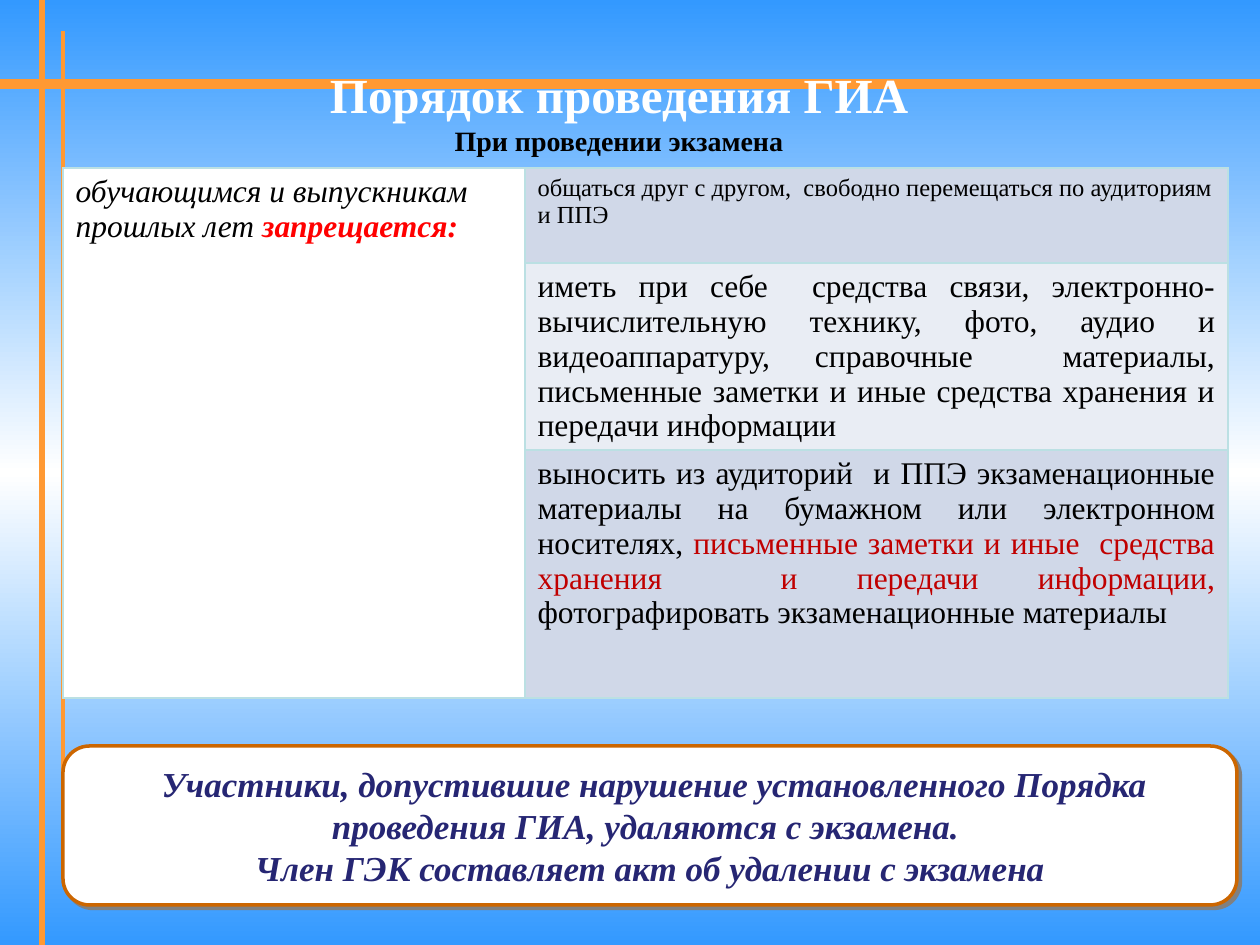
from copy import deepcopy
from dataclasses import dataclass

from lxml import etree
from pptx import Presentation
from pptx.dml.color import RGBColor
from pptx.enum import shapes, text
from pptx.oxml import ns
from pptx.util import Pt

PX = 914400 // 126
FACE = "Times New Roman"
BLUE = RGBColor(0x33, 0x99, 0xFF)
WHITE = RGBColor(0xFF, 0xFF, 0xFF)
BLACK = RGBColor(0, 0, 0)
ORANGE = RGBColor(0xFF, 0x99, 0x33)
RUST = RGBColor(0xCC, 0x66, 0x00)
RED = RGBColor(0xFF, 0, 0)
CRIMSON = RGBColor(0xC0, 0, 0)
NAVY = RGBColor(0x26, 0x26, 0x73)
MIST = RGBColor(0xD0, 0xD8, 0xE8)
PALE = RGBColor(0xE9, 0xED, 0xF4)
TEAL = RGBColor(0xBB, 0xE0, 0xE3)
GREY = RGBColor(0x80, 0x80, 0x80)


@dataclass
class Bar:
    x1: int
    y1: int
    x2: int
    y2: int
    width: float


@dataclass
class Span:
    words: str
    color: RGBColor = BLACK
    bold: bool = False


@dataclass
class Entry:
    row: int
    col: int
    fill: RGBColor
    size: int
    spans: list[Span]
    align: text.PP_ALIGN = text.PP_ALIGN.LEFT
    italic: bool = False


BARS = [
    Bar(0, 84, 1260, 84, 6),
    Bar(42, 0, 42, 945, 3),
    Bar(63, 31, 63, 872, 2.25),
]
COLS = [462, 703]
ROWS = [95, 187, 248]
JUST = text.PP_ALIGN.JUSTIFY
ENTRIES = [
    Entry(0, 0, WHITE, 18, [
        Span("обучающимся и выпускникам прошлых лет"),
        Span(" запрещается:", RED, True)], italic=True),
    Entry(0, 1, MIST, 14, [
        Span("общаться друг с другом,  свободно перемещаться по аудиториям и ППЭ")]),
    Entry(1, 1, PALE, 18, [
        Span("иметь при себе  средства связи, электронно-вычислительную технику, "
             "фото, аудио и видеоаппаратуру, справочные  материалы, письменные "
             "заметки и иные средства хранения и передачи информации")], JUST),
    Entry(2, 1, MIST, 18, [
        Span("выносить из аудиторий  и ППЭ экзаменационные материалы на "
             "бумажном или электронном носителях, "),
        Span("письменные заметки и иные  средства хранения  и передачи "
             "информации, ", CRIMSON),
        Span("фотографировать экзаменационные материалы")], JUST),
]
NOTES = [
    " Участники, допустившие нарушение установленного Порядка проведения "
    "ГИА, удаляются с экзамена. ",
    "Член ГЭК составляет акт об удалении с экзамена",
]


def paint(slide) -> None:
    fill = slide.background.fill
    fill.gradient()
    fill.gradient_angle = 270
    stops = slide._element.find(".//" + ns.qn("a:gsLst"))
    stops.insert(1, deepcopy(stops[0]))
    for stop, place, color in zip(fill.gradient_stops, (0, 0.5, 1), (BLUE, WHITE, BLUE)):
        stop.position = place
        stop.color.rgb = color


def rule(slide, bar: Bar) -> None:
    ends = [v * PX for v in (bar.x1, bar.y1, bar.x2, bar.y2)]
    line = slide.shapes.add_connector(shapes.MSO_CONNECTOR.STRAIGHT, *ends)
    line.line.color.rgb = ORANGE
    line.line.width = Pt(bar.width)
    etree.SubElement(line._element.spPr, ns.qn("a:effectLst"))


def head(slide) -> None:
    title = slide.shapes.title
    slide.shapes._spTree.append(title._element)
    title.left, title.top, title.width, title.height = (
        v * PX for v in (10, 84, 1218, 53))
    frame = title.text_frame
    frame.auto_size = text.MSO_AUTO_SIZE.NONE
    frame.vertical_anchor = text.MSO_ANCHOR.MIDDLE
    para = frame.paragraphs[0]
    para.alignment = text.PP_ALIGN.CENTER
    para.font.name = FACE
    para.font.bold = True
    for words, size, color in (("Порядок проведения ГИА", 28, WHITE),
                               ("При проведении экзамена", 16, BLACK)):
        if para.runs:
            para.add_line_break()
        run = para.add_run()
        run.text = words
        run.font.size = Pt(size)
        run.font.color.rgb = color


def edge(cell) -> None:
    props = cell._tc.get_or_add_tcPr()
    for spot, side in enumerate(("lnL", "lnR", "lnT", "lnB")):
        line = etree.Element(ns.qn("a:" + side), w=str(Pt(1)))
        solid = etree.SubElement(line, ns.qn("a:solidFill"))
        etree.SubElement(solid, ns.qn("a:srgbClr"), val=str(TEAL))
        props.insert(spot, line)


def enter(cell, entry: Entry) -> None:
    cell.fill.solid()
    cell.fill.fore_color.rgb = entry.fill
    para = cell.text_frame.paragraphs[0]
    para.alignment = entry.align
    para.font.name = FACE
    para.font.size = Pt(entry.size)
    para.font.italic = entry.italic
    for span in entry.spans:
        run = para.add_run()
        run.text = span.words
        run.font.color.rgb = span.color
        run.font.bold = span.bold


def grid(slide) -> None:
    table = slide.shapes.add_table(
        len(ROWS), len(COLS), 63 * PX, 168 * PX, sum(COLS) * PX, sum(ROWS) * PX).table
    table.first_row = table.horz_banding = False
    for col, width in zip(table.columns, COLS):
        col.width = width * PX
    for row, height in zip(table.rows, ROWS):
        row.height = height * PX
    table.cell(0, 0).merge(table.cell(2, 0))
    for entry in ENTRIES:
        enter(table.cell(entry.row, entry.col), entry)
    for cell in table.iter_cells():
        edge(cell)


def note(slide) -> None:
    box = slide.shapes.add_shape(
        shapes.MSO_SHAPE.ROUNDED_RECTANGLE, *(v * PX for v in (63, 746, 1174, 159)))
    box.fill.solid()
    box.fill.fore_color.rgb = WHITE
    box.line.color.rgb = RUST
    box.line.width = Pt(2)
    box.shadow.inherit = False
    glow = etree.SubElement(
        box._element.spPr.find(ns.qn("a:effectLst")), ns.qn("a:outerShdw"),
        dist=str(Pt(2.8)), dir="2700000", algn="ctr", rotWithShape="0")
    etree.SubElement(glow, ns.qn("a:srgbClr"), val=str(GREY))
    frame = box.text_frame
    frame.margin_left = frame.margin_right = 16 * PX
    frame.margin_top = frame.margin_bottom = 8 * PX
    frame.vertical_anchor = text.MSO_ANCHOR.MIDDLE
    frame.text = "\n".join(NOTES)
    for para in frame.paragraphs:
        para.alignment = text.PP_ALIGN.CENTER
        para.font.name = FACE
        para.font.size = Pt(20)
        para.font.bold = para.font.italic = True
        para.font.color.rgb = NAVY


def main() -> None:
    deck = Presentation()
    deck.slide_width, deck.slide_height = 1260 * PX, 945 * PX
    slide = deck.slides.add_slide(deck.slide_layouts[5])
    paint(slide)
    for bar in BARS:
        rule(slide, bar)
    head(slide)
    grid(slide)
    note(slide)
    deck.save("out.pptx")


if __name__ == "__main__":
    main()
